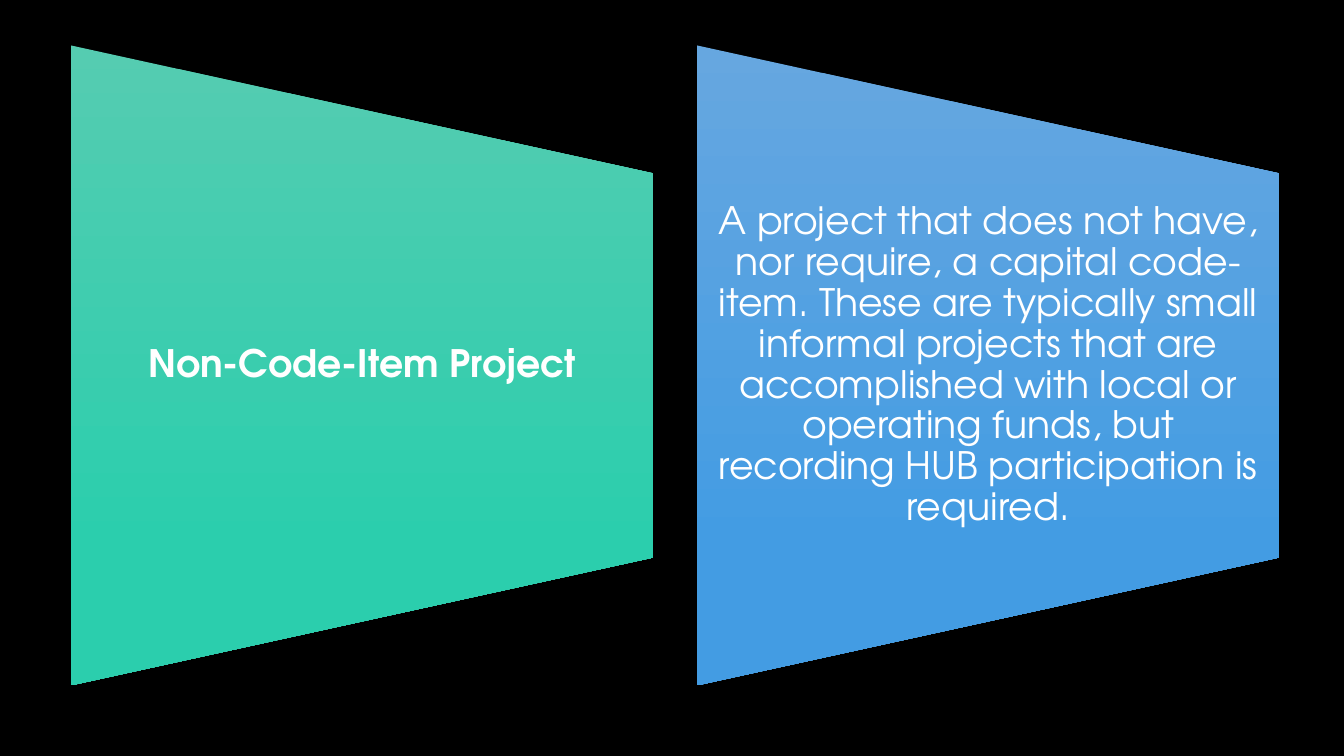
from dataclasses import dataclass

from pptx import Presentation
from pptx.dml.color import RGBColor
from pptx.enum.shapes import MSO_SHAPE as Shape
from pptx.enum.text import MSO_ANCHOR as Anchor, PP_ALIGN as Align
from pptx.util import Inches, Pt


@dataclass(frozen=True)
class Theme:
    """Colours and type of the slide."""
    background: str = "000000"
    text: str = "FFFFFF"
    term_fill: tuple = ("55CCB1", "2BCEAD")
    definition_fill: tuple = ("66A7E0", "439CE3")
    font: str = "TeX Gyre Adventor"
    size: int = 27


THEME = Theme()
TERM = "Non-Code-Item Project"
DEFINITION = (
    "A project that does not have, nor require, a capital code-item. "
    "These are typically small informal projects that are accomplished "
    "with local or operating funds, but recording HUB participation is required."
)


def add_backdrop(slide, left, top, width, height, colours):
    """Draw a trapezoid narrowing to the right, with a downward gradient."""
    backdrop = slide.shapes.add_shape(
        Shape.FLOWCHART_MANUAL_OPERATION,
        Inches(left + (width - height) / 2), Inches(top + (height - width) / 2),
        Inches(height), Inches(width))
    backdrop.rotation = 270
    backdrop.shadow.inherit = False
    backdrop.line.fill.background()
    backdrop.fill.gradient()
    backdrop.fill.gradient_angle = 270
    backdrop.fill._xPr.gradFill.set("rotWithShape", "0")
    for stop, position, colour in zip(backdrop.fill.gradient_stops, (0, 0.78), colours):
        stop.position = position
        stop.color.rgb = RGBColor.from_string(colour)


def add_panel(slide, left, top, width, height, colours, wording, bold):
    """Place a backdrop and its centred wording in the given box."""
    add_backdrop(slide, left, top, width, height, colours)
    label = slide.shapes.add_textbox(
        Inches(left), Inches(top + height / 5), Inches(width), Inches(height * 3 / 5))
    frame = label.text_frame
    frame.word_wrap = True
    frame.vertical_anchor = Anchor.MIDDLE
    frame.margin_left = frame.margin_right = Inches(0.19)
    frame.margin_top = frame.margin_bottom = 0
    frame.text = wording
    paragraph = frame.paragraphs[0]
    paragraph.alignment = Align.CENTER
    paragraph.line_spacing = 0.9
    font = paragraph.runs[0].font
    font.name, font.size, font.bold = THEME.font, Pt(THEME.size), bold
    font.color.rgb = RGBColor.from_string(THEME.text)


def build_definition_slide(slide, left, top, width, height):
    """Set the term beside its definition within the given box."""
    gap = 0.43
    panel_width = (width - gap) / 2
    panels = ((THEME.term_fill, TERM, True),
              (THEME.definition_fill, DEFINITION, False))
    for index, (colours, wording, bold) in enumerate(panels):
        add_panel(slide, left + index * (panel_width + gap), top,
                  panel_width, height, colours, wording, bold)


def main():
    """Build and save the presentation."""
    deck = Presentation()
    deck.slide_width, deck.slide_height = Inches(13.33), Inches(7.5)
    slide = deck.slides.add_slide(deck.slide_layouts[6])
    slide.background.fill.solid()
    slide.background.fill.fore_color.rgb = RGBColor.from_string(THEME.background)
    build_definition_slide(slide, 0.7, 0.45, 11.99, 6.35)
    deck.save("out.pptx")


if __name__ == "__main__":
    main()
